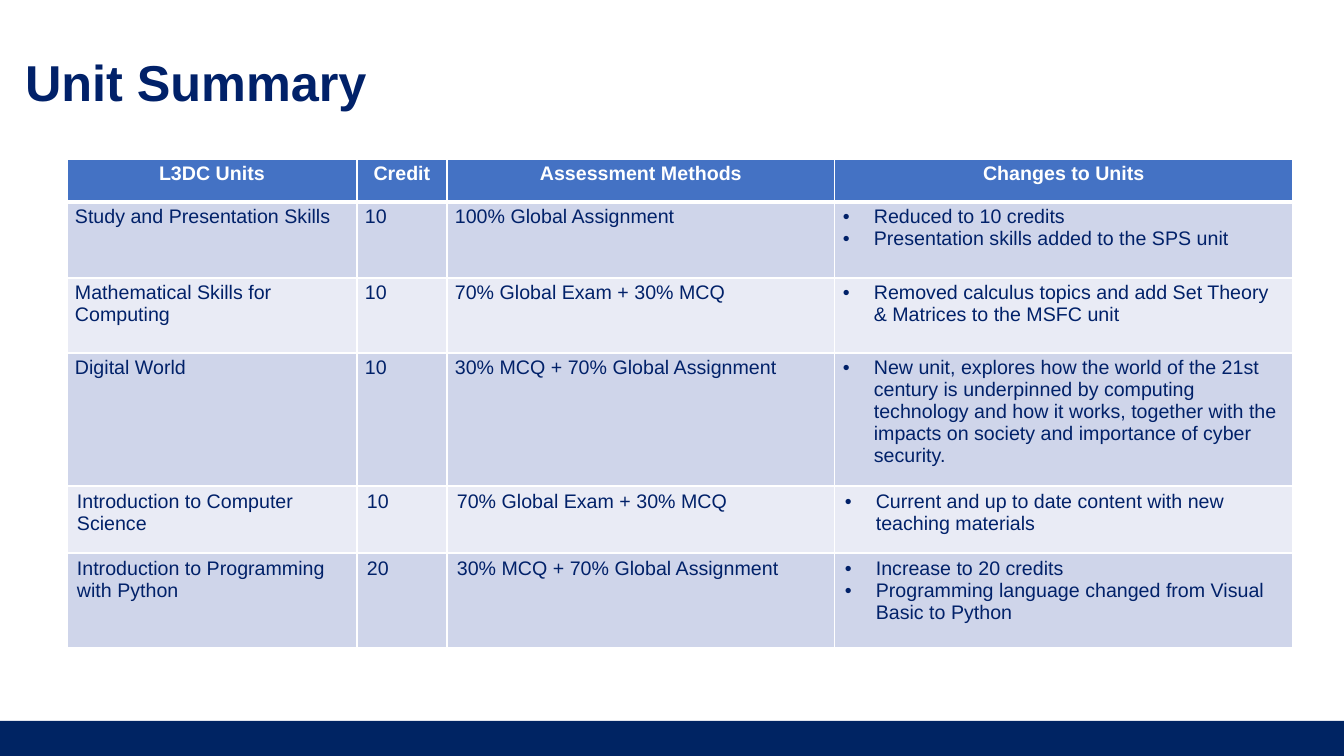
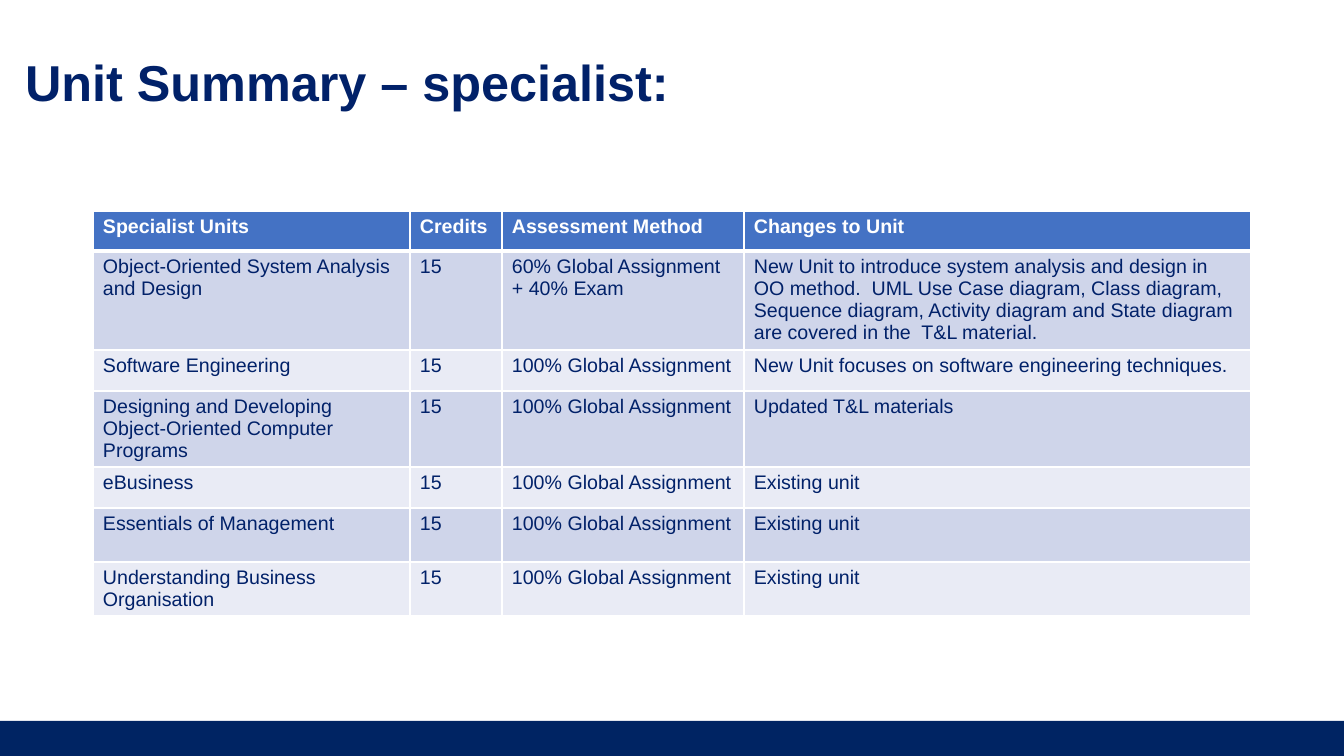
from dataclasses import dataclass

from lxml import etree
from pptx import Presentation
from pptx.dml.color import RGBColor
from pptx.enum.shapes import MSO_SHAPE
from pptx.enum.text import MSO_ANCHOR, MSO_AUTO_SIZE, PP_ALIGN
from pptx.oxml.ns import qn
from pptx.util import Emu, Pt

RECTANGLE = MSO_SHAPE.RECTANGLE
LEFT, CENTER = PP_ALIGN.LEFT, PP_ALIGN.CENTER
MIDDLE = MSO_ANCHOR.MIDDLE
NO_AUTOFIT = MSO_AUTO_SIZE.NONE

# Shared style
SLIDE_WIDTH, SLIDE_HEIGHT = 1344, 756
EMU_PER_PX = 12192000 / SLIDE_WIDTH
FONT = "Arial"
WHITE = RGBColor(0xFF, 0xFF, 0xFF)
NAVY = RGBColor(0x01, 0x21, 0x69)
FOOTER_NAVY = RGBColor(0x00, 0x24, 0x63)
HEADER_BLUE = RGBColor(0x44, 0x72, 0xC4)
ROW_FILLS = (RGBColor(0xCF, 0xD5, 0xEA), RGBColor(0xE9, 0xEB, 0xF5))
TITLE_ONLY = 5
TITLE_LEFT, TITLE_TOP, TITLE_HEIGHT = 15, 46, 70
FOOTER_TOP = 721
TITLE_SIZE, TABLE_SIZE = 36, 14
BULLET_INDENT = 31
TIGHT_MARGINS, NORMAL_MARGINS = (8, 4), (10, 5)


@dataclass(frozen=True)
class UnitTable:
    title: str
    title_width: int
    left: int
    top: int
    column_widths: tuple[int, ...]
    row_heights: tuple[int, ...]
    rows: tuple[tuple[str, ...], ...]
    header_alignment: PP_ALIGN = LEFT
    tight_rows: int = 0
    bulleted_column: int | None = None


GLOBAL_ASSIGNMENT = "100% Global Assignment"
EXAM_AND_MCQ = "70% Global Exam + 30% MCQ"
MCQ_AND_ASSIGNMENT = "30% MCQ + 70% Global Assignment"

UNIT_TABLES = (
    UnitTable(
        title="Unit Summary",
        title_width=831,
        left=67,
        top=159,
        column_widths=(290, 90, 388, 458),
        row_heights=(43, 76, 75, 133, 67, 95),
        header_alignment=CENTER,
        tight_rows=4,
        bulleted_column=3,
        rows=(
            ("L3DC Units", "Credit", "Assessment Methods", "Changes to Units"),
            ("Study and Presentation Skills", "10", GLOBAL_ASSIGNMENT,
             "Reduced to 10 credits\nPresentation skills added to the SPS unit"),
            ("Mathematical Skills for Computing", "10", EXAM_AND_MCQ,
             "Removed calculus topics and add Set Theory & Matrices to the MSFC unit"),
            ("Digital World", "10", MCQ_AND_ASSIGNMENT,
             "New unit, explores how the world of the 21st century is underpinned by "
             "computing technology and how it works, together with the impacts on "
             "society and importance of cyber security."),
            ("Introduction to Computer Science", "10", EXAM_AND_MCQ,
             "Current and up to date content with new teaching materials"),
            ("Introduction to Programming with Python", "20", MCQ_AND_ASSIGNMENT,
             "Increase to 20 credits\n"
             "Programming language changed from Visual Basic to Python"),
        ),
    ),
    UnitTable(
        title="Unit Summary – specialist:",
        title_width=1145,
        left=93,
        top=211,
        column_widths=(317, 92, 242, 507),
        row_heights=(40, 99, 41, 76, 41, 54, 54),
        rows=(
            ("Specialist Units", "Credits", "Assessment Method", "Changes to Unit"),
            ("Object-Oriented System Analysis and Design", "15",
             "60% Global Assignment + 40% Exam",
             "New Unit to introduce system analysis and design in OO method.  UML Use "
             "Case diagram, Class diagram, Sequence diagram, Activity diagram and State "
             "diagram are covered in the  T&L material."),
            ("Software Engineering", "15", GLOBAL_ASSIGNMENT,
             "New Unit focuses on software engineering techniques."),
            ("Designing and Developing Object-Oriented Computer Programs", "15",
             GLOBAL_ASSIGNMENT, "Updated T&L materials"),
            ("eBusiness", "15", GLOBAL_ASSIGNMENT, "Existing unit"),
            ("Essentials of Management", "15", GLOBAL_ASSIGNMENT, "Existing unit"),
            ("Understanding Business Organisation", "15", GLOBAL_ASSIGNMENT,
             "Existing unit"),
        ),
    ),
)


def px(length: int) -> Emu:
    return Emu(round(length * EMU_PER_PX))


def set_font(paragraph, size: int, color: RGBColor, bold: bool) -> None:
    font = paragraph.font
    font.name, font.size, font.bold = FONT, Pt(size), bold
    font.color.rgb = color


def add_bullet(paragraph) -> None:
    properties = paragraph._p.get_or_add_pPr()
    properties.set("marL", str(px(BULLET_INDENT)))
    properties.set("indent", str(-px(BULLET_INDENT)))
    etree.SubElement(properties, qn("a:buFont")).set("typeface", FONT)
    etree.SubElement(properties, qn("a:buChar")).set("char", "•")


def add_borders(cell, top: int, bottom: int) -> None:
    """Draw white borders; top and bottom are widths in points."""
    properties = cell._tc.get_or_add_tcPr()
    for side, width in (("L", 1), ("R", 1), ("T", top), ("B", bottom)):
        line = etree.SubElement(properties, qn(f"a:ln{side}"), w=str(Pt(width)))
        fill = etree.SubElement(line, qn("a:solidFill"))
        etree.SubElement(fill, qn("a:srgbClr")).set("val", str(WHITE))


def add_footer_band(slide) -> None:
    band = slide.shapes.add_shape(
        RECTANGLE, 0, px(FOOTER_TOP), px(SLIDE_WIDTH), px(SLIDE_HEIGHT - FOOTER_TOP))
    band.shadow.inherit = False
    band.fill.solid()
    band.fill.fore_color.rgb = FOOTER_NAVY
    band.line.fill.background()


def add_title(slide, text: str, width: int) -> None:
    title = slide.shapes.title
    title.left, title.top = px(TITLE_LEFT), px(TITLE_TOP)
    title.width, title.height = px(width), px(TITLE_HEIGHT)
    frame = title.text_frame
    frame.text = text
    frame.auto_size = NO_AUTOFIT
    frame.vertical_anchor = MIDDLE
    paragraph = frame.paragraphs[0]
    paragraph.alignment = LEFT
    set_font(paragraph, TITLE_SIZE, NAVY, True)


def fill_cell(cell, row: int, column: int, unit_table: UnitTable) -> None:
    is_header = row == 0
    margins = TIGHT_MARGINS if row < unit_table.tight_rows else NORMAL_MARGINS
    cell.margin_left = cell.margin_right = px(margins[0])
    cell.margin_top = cell.margin_bottom = px(margins[1])
    add_borders(cell, top=3 if row == 1 else 1, bottom=3 if is_header else 1)
    cell.fill.solid()
    cell.fill.fore_color.rgb = HEADER_BLUE if is_header else ROW_FILLS[(row - 1) % 2]
    cell.text = unit_table.rows[row][column]
    for paragraph in cell.text_frame.paragraphs:
        paragraph.alignment = unit_table.header_alignment if is_header else LEFT
        if column == unit_table.bulleted_column and not is_header:
            add_bullet(paragraph)
        set_font(paragraph, TABLE_SIZE, WHITE if is_header else NAVY, is_header)


def add_unit_table(slide, unit_table: UnitTable) -> None:
    widths, heights = unit_table.column_widths, unit_table.row_heights
    table = slide.shapes.add_table(
        len(heights), len(widths), px(unit_table.left), px(unit_table.top),
        px(sum(widths)), px(sum(heights))).table
    for column, width in zip(table.columns, widths):
        column.width = px(width)
    for row, height in zip(table.rows, heights):
        row.height = px(height)
    for row in range(len(heights)):
        for column in range(len(widths)):
            fill_cell(table.cell(row, column), row, column, unit_table)


def main() -> None:
    presentation = Presentation()
    presentation.slide_width = px(SLIDE_WIDTH)
    presentation.slide_height = px(SLIDE_HEIGHT)
    layout = presentation.slide_layouts[TITLE_ONLY]
    for unit_table in UNIT_TABLES:
        slide = presentation.slides.add_slide(layout)
        add_footer_band(slide)
        add_title(slide, unit_table.title, unit_table.title_width)
        add_unit_table(slide, unit_table)
    presentation.save("out.pptx")


if __name__ == "__main__":
    main()
